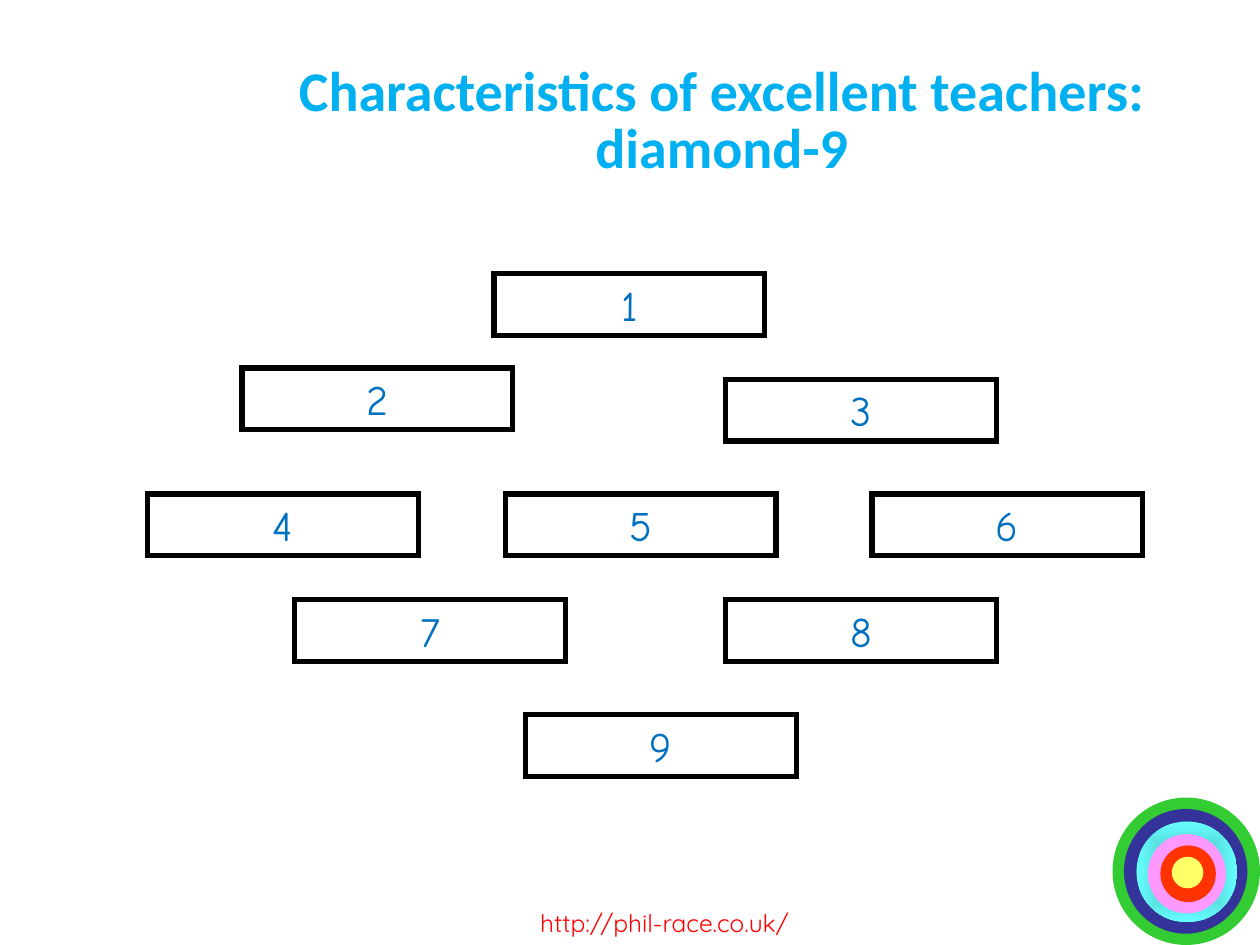
from lxml import etree
from pptx import Presentation
from pptx.dml.color import RGBColor
from pptx.enum.shapes import MSO_SHAPE
from pptx.enum.text import MSO_ANCHOR, PP_ALIGN
from pptx.oxml.ns import qn
from pptx.util import Inches, Pt

RECT, OVAL = MSO_SHAPE.RECTANGLE, MSO_SHAPE.OVAL
MIDDLE, TOP, CENTER = MSO_ANCHOR.MIDDLE, MSO_ANCHOR.TOP, PP_ALIGN.CENTER

SKY = RGBColor(0x00, 0xB0, 0xF0)
BLUE = RGBColor(0x00, 0x70, 0xC0)
RED = RGBColor(0xFF, 0x00, 0x00)
BLACK = RGBColor(0x00, 0x00, 0x00)
WHITE = RGBColor(0xFF, 0xFF, 0xFF)
GREEN = RGBColor(0x33, 0xCC, 0x33)
NAVY = RGBColor(0x33, 0x33, 0x99)
TEAL = RGBColor(0x47, 0xB2, 0xB2)
CYAN = RGBColor(0x66, 0xFF, 0xFF)
PINK = RGBColor(0xFF, 0x99, 0xFF)
FLAME = RGBColor(0xFF, 0x33, 0x00)
YELLOW = RGBColor(0xFF, 0xFF, 0x66)

TITLE = "Characteristics of excellent teachers: diamond-9"
SITE = "http://phil-race.co.uk/"
ROWS = [
    [(3.92, 2.17)],
    [(1.92, 2.92), (5.76, 3.01)],
    [(1.17, 3.92), (4.01, 3.92), (6.92, 3.92)],
    [(2.34, 4.76), (5.76, 4.76)],
    [(4.17, 5.67)],
]
BOX = (2.15, 0.49)
FILLED = 7
RINGS = [
    (8.83, 6.33, 1.17, 1.17, [GREEN]),
    (8.92, 6.42, 0.98, 0.99, [NAVY]),
    (9.02, 6.52, 0.8, 0.8, [TEAL, CYAN]),
    (9.11, 6.62, 0.62, 0.63, [PINK]),
    (9.21, 6.71, 0.44, 0.45, [FLAME]),
    (9.3, 6.8, 0.25, 0.25, [YELLOW]),
]


def write(shape, text, size, font, color, bold=False, anchor=MIDDLE,
          wrap=True, space=None):
    frame = shape.text_frame
    frame.word_wrap = wrap
    frame.vertical_anchor = anchor
    para = frame.paragraphs[0]
    para.alignment = CENTER
    if space:
        para.line_spacing = space
    run = para.add_run()
    run.text = text
    run.font.size = Pt(size)
    run.font.name = font
    run.font.bold = bold
    run.font.color.rgb = color


def radial(shape, colors):
    shape.fill.gradient()
    for stop, color in zip(shape.fill.gradient_stops, colors):
        stop.color.rgb = color
    grad = shape.element.spPr.find(qn("a:gradFill"))
    route = etree.Element(qn("a:path"))
    route.set("path", "shape")
    focus = etree.SubElement(route, qn("a:fillToRect"))
    for side in "ltrb":
        focus.set(side, "50000")
    grad.replace(grad.find(qn("a:lin")), route)


def draw(slide, kind, area, colors):
    shape = slide.shapes.add_shape(kind, *map(Inches, area))
    shape.shadow.inherit = False
    shape.line.fill.background()
    if len(colors) > 1:
        radial(shape, colors)
    elif colors:
        shape.fill.solid()
        shape.fill.fore_color.rgb = colors[0]
    else:
        shape.fill.background()
    return shape


def frame_card(card):
    card.line.color.rgb = BLACK
    card.line.width = Pt(3)
    edge = card.element.spPr.find(qn("a:ln"))
    etree.SubElement(edge, qn("a:miter")).set("lim", "800000")


def main():
    deck = Presentation()
    deck.slide_width, deck.slide_height = Inches(10), Inches(7.5)
    slide = deck.slides.add_slide(deck.slide_layouts[5])

    for *area, colors in RINGS:
        draw(slide, OVAL, area, colors)

    site = slide.shapes.add_textbox(*map(Inches, (3.83, 7.16, 2.89, 0.34)))
    write(site, SITE, 14, "Quicksand", RED, anchor=TOP)

    title = slide.shapes.title
    title.left, title.top, title.width, title.height = map(
        Inches, (1.46, 0.38, 8.54, 1.19))
    write(title, TITLE, 32, "Calibri", SKY, bold=True, space=0.85)

    spots = [spot for row in ROWS for spot in row]
    for rank, spot in enumerate(spots, 1):
        card = draw(slide, RECT, spot + BOX, [WHITE] if rank == FILLED else [])
        frame_card(card)
        write(card, str(rank), 24, "Comic Neue", BLUE, wrap=False)

    deck.save("out.pptx")


if __name__ == "__main__":
    main()
